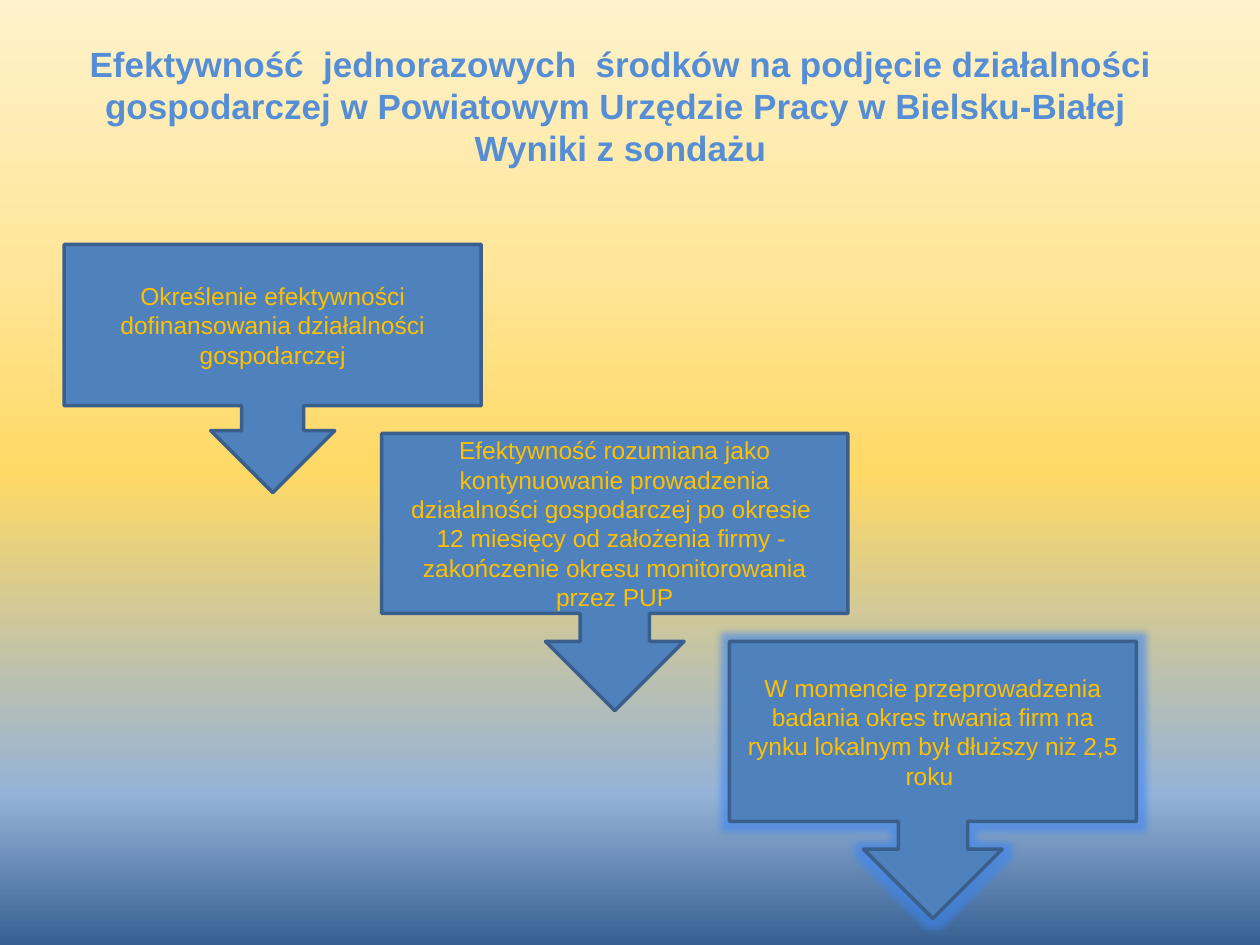
from dataclasses import dataclass

from lxml import etree
from pptx import Presentation
from pptx import util as u
from pptx.dml.color import RGBColor
from pptx.enum import shapes, text
from pptx.oxml.ns import qn
from pptx.slide import Slide
from pptx.text.text import TextFrame


@dataclass(frozen=True)
class Theme:
    font: str = "Arial"
    title_size: int = 20
    body_size: int = 14
    title: str = "558ED5"
    body: str = "FFC000"
    box: str = "4F81BD"
    outline: str = "3A5F8C"
    glow: str = "3D85F0"
    outline_width: float = 2
    backdrop: tuple[tuple[int, str], ...] = (
        (0, "FFF2CC"),
        (28, "FFE699"),
        (50, "FFD966"),
        (84, "95B3D7"),
        (100, "376092"),
    )


@dataclass(frozen=True)
class Step:
    left: float
    top: float
    width: float
    height: float
    lines: tuple[str, ...]
    glowing: bool = False


THEME = Theme()

HEADING = (
    "Efektywność  jednorazowych  środków na podjęcie działalności gospodarczej "
    "w Powiatowym Urzędzie Pracy w Bielsku-Białej ",
    "Wyniki z sondażu",
)

STEPS = (
    Step(0.51, 1.94, 3.31, 1.97,
         ("Określenie efektywności dofinansowania działalności gospodarczej",)),
    Step(3.03, 3.44, 3.7, 2.2,
         ("Efektywność rozumiana jako kontynuowanie prowadzenia "
          "działalności gospodarczej po okresie ",
          "12 miesięcy od założenia firmy -  zakończenie okresu "
          "monitorowania przez PUP")),
    Step(5.79, 5.09, 3.23, 2.2,
         ("W momencie przeprowadzenia badania okres trwania firm "
          "na rynku lokalnym był dłuższy niż 2,5 roku ",),
         glowing=True),
)


def add_colour(parent: etree._Element, colour: str) -> etree._Element:
    return etree.SubElement(parent, qn("a:srgbClr"), val=colour)


def paint_backdrop(slide: Slide) -> None:
    fill = slide.background.fill
    fill.gradient()
    fill.gradient_angle = 270
    stops = slide._element.find(f".//{qn('a:gsLst')}")
    for default_stop in list(stops):
        stops.remove(default_stop)
    for percent, colour in THEME.backdrop:
        add_colour(etree.SubElement(stops, qn("a:gs"), pos=str(percent * 1000)), colour)


def format_text(frame: TextFrame, size: int, colour: str, bold: bool) -> None:
    frame.word_wrap = True
    style = {"name": THEME.font, "size": u.Pt(size), "bold": bold}
    for paragraph in frame.paragraphs:
        paragraph.alignment = text.PP_ALIGN.CENTER
        for run in paragraph.runs:
            for attribute, value in style.items():
                setattr(run.font, attribute, value)
            run.font.color.rgb = RGBColor.from_string(colour)


def add_step(slide: Slide, step: Step) -> None:
    callout = slide.shapes.add_shape(
        shapes.MSO_SHAPE.DOWN_ARROW_CALLOUT,
        *map(u.Inches, (step.left, step.top, step.width, step.height)),
    )
    callout._element.spPr.xfrm.set("flipH", "1")
    callout.fill.solid()
    callout.fill.fore_color.rgb = RGBColor.from_string(THEME.box)
    callout.line.color.rgb = RGBColor.from_string(THEME.outline)
    callout.line.width = u.Pt(THEME.outline_width)
    callout.shadow.inherit = False
    if step.glowing:
        effects = callout._element.spPr.find(qn("a:effectLst"))
        glow = etree.SubElement(effects, qn("a:glow"), rad=str(u.Pt(8)))
        etree.SubElement(add_colour(glow, THEME.glow), qn("a:alpha"), val="60000")

    frame = callout.text_frame
    frame.vertical_anchor = text.MSO_ANCHOR.MIDDLE
    paragraph = frame.paragraphs[0]
    for index, line in enumerate(step.lines):
        if index:
            paragraph.add_line_break()
        paragraph.add_run().text = line
    format_text(frame, THEME.body_size, THEME.body, bold=False)


def add_heading(slide: Slide) -> None:
    heading = slide.shapes.add_textbox(*map(u.Inches, (0.2, 0.29, 9.45, 1.11)))
    frame = heading.text_frame
    frame.auto_size = text.MSO_AUTO_SIZE.SHAPE_TO_FIT_TEXT
    frame.text = "\n".join(HEADING)
    format_text(frame, THEME.title_size, THEME.title, bold=True)


def main() -> None:
    deck = Presentation()
    deck.slide_width = u.Inches(10)
    deck.slide_height = u.Inches(7.5)
    slide = deck.slides.add_slide(deck.slide_layouts[6])
    paint_backdrop(slide)
    for step in STEPS:
        add_step(slide, step)
    add_heading(slide)
    deck.save("out.pptx")


if __name__ == "__main__":
    main()
